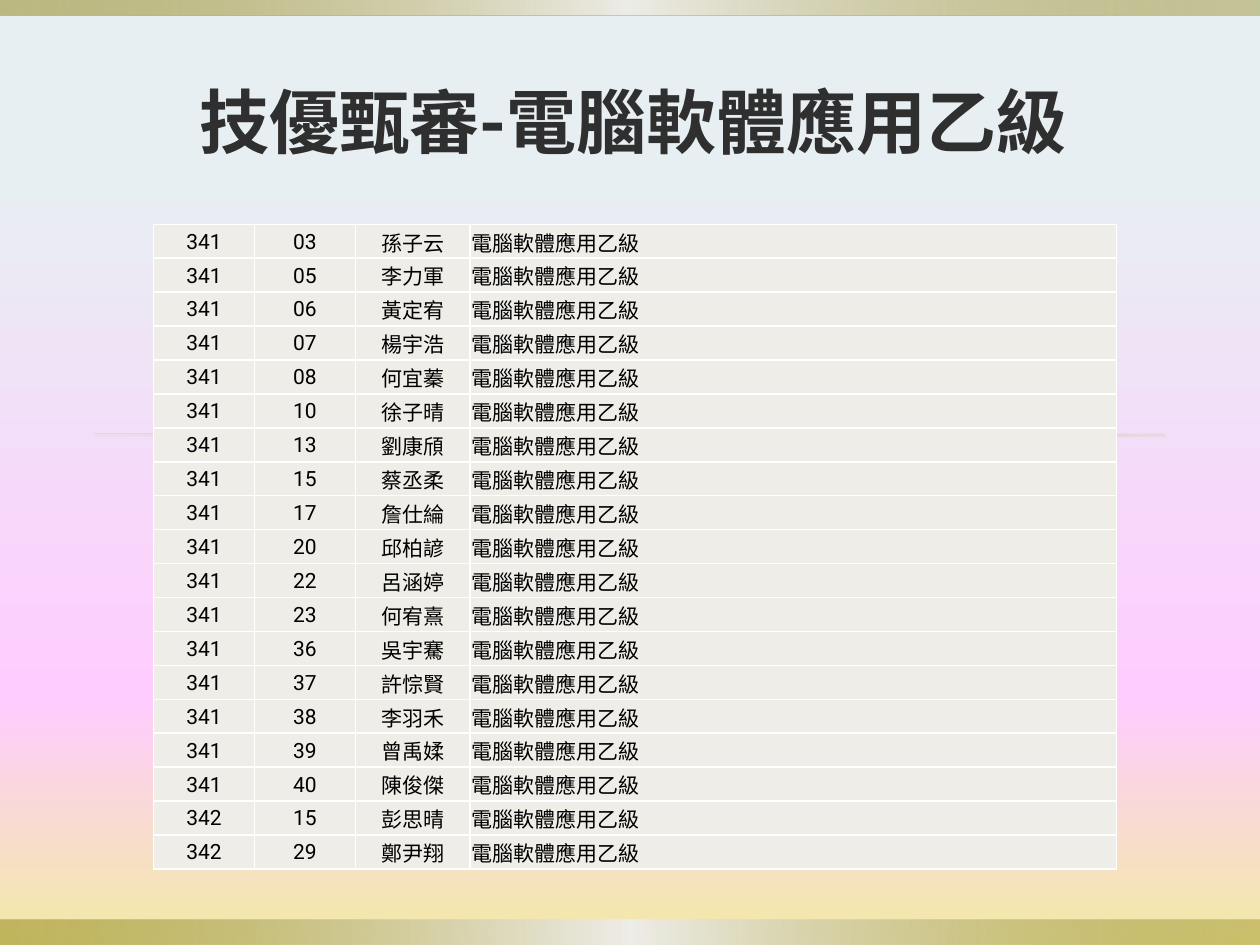
import pptx
import pptx.util
import pptx.dml.color
import pptx.enum.shapes
import pptx.enum.text
import pptx.oxml
import pptx.oxml.ns

WIDE, HIGH = 10, 7.5
FONT = "Roboto"
HUES = {"ink": "2F2F2F", "black": "000000", "white": "FFFFFF", "cell": "EEEDE8",
        "gold": "918415", "sand": "DCD9CC", "sky": "E7EFF2", "pink": "FFCCFF",
        "cream": "F2EAA5"}
SKY = [(18, "sky", 100), (74, "pink", 100), (100, "cream", 100)]
BAND = [(0, "gold", 50), (50, "cell", 100), (100, "gold", 40)]
RULE = [(0, "sand", 20), (50, "gold", 40), (100, "sand", 50)]
COLS = [0.8, 0.8, 0.91, 5.13]
SKILL = "電腦軟體應用乙級"
TITLE = "技優甄審-" + SKILL
GROUPS = {
    "341": "03 孫子云 05 李力軍 06 黃定宥 07 楊宇浩 08 何宜蓁 10 徐子晴 13 劉康頎 "
           "15 蔡丞柔 17 詹仕綸 20 邱柏諺 22 呂涵婷 23 何宥熹 36 吳宇騫 37 許悰賢 "
           "38 李羽禾 39 曾禹媃 40 陳俊傑",
    "342": "15 彭思晴 29 鄭尹翔",
}


def color(name):
    """Return the named colour."""
    return pptx.dml.color.RGBColor.from_string(HUES[name])


def place(item, box):
    """Move and size an item to a box in inches."""
    item.left, item.top, item.width, item.height = map(pptx.util.Inches, box)


def write(frame, text, size=12, hue="black", bold=False, align="CENTER"):
    """Put formatted text into a text frame."""
    para = frame.paragraphs[0]
    para.alignment = getattr(pptx.enum.text.PP_ALIGN, align)
    run = para.add_run()
    run.text = text
    run.font.name, run.font.size, run.font.bold = FONT, pptx.util.Pt(size), bold
    run.font.color.rgb = color(hue)


def blend(fill, node, stops, angle=0):
    """Give a fill gradient stops of position, colour and opacity."""
    fill.gradient()
    fill.gradient_angle = angle
    chain = node.xpath(".//a:gradFill/a:gsLst")[0]
    for old in list(chain):
        chain.remove(old)
    for spot, hue, alpha in stops:
        chain.append(pptx.oxml.parse_xml(
            f'<a:gs {pptx.oxml.ns.nsdecls("a")} pos="{spot * 1000}">'
            f'<a:srgbClr val="{HUES[hue]}"><a:alpha val="{alpha * 1000}"/>'
            '</a:srgbClr></a:gs>'))


def strip(slide, box, stops):
    """Draw a gradient strip."""
    shape = slide.shapes.add_shape(
        pptx.enum.shapes.MSO_SHAPE.RECTANGLE, *map(pptx.util.Inches, box))
    shape.shadow.inherit = False
    shape.line.fill.background()
    blend(shape.fill, shape.element, stops)


def decor(slide, box):
    """Draw the backdrop with its bands and middle rule."""
    left, top, wide, high = box
    blend(slide.background.fill, slide.element, SKY, 270)
    strip(slide, (left, top + high - 0.2, wide, 0.2), BAND)
    strip(slide, (left, top, wide, 0.12), BAND)
    strip(slide, (left + wide * 0.075, top + 3.44, wide * 0.85, 0.02), RULE)


def head(slide, box):
    """Fill the title and bring it above the backdrop."""
    title = slide.shapes.title
    place(title, box)
    frame = title.text_frame
    frame.word_wrap = True
    frame.auto_size = pptx.enum.text.MSO_AUTO_SIZE.NONE
    frame.vertical_anchor = pptx.enum.text.MSO_ANCHOR.MIDDLE
    write(frame, TITLE, size=40, hue="ink", bold=True)
    slide.shapes.element.append(title.element)


def edge(cell):
    """Line all four sides of a cell."""
    props = cell._tc.get_or_add_tcPr()
    for spot, side in enumerate("LRTB"):
        props.insert(spot, pptx.oxml.parse_xml(
            f'<a:ln{side} {pptx.oxml.ns.nsdecls("a")} w="12700"><a:solidFill>'
            f'<a:srgbClr val="{HUES["white"]}"/></a:solidFill></a:ln{side}>'))


def roster(slide, box):
    """Build the table of pupils with equal rows."""
    rows = []
    for room, text in GROUPS.items():
        words = text.split()
        rows += [(room, seat, name, SKILL) for seat, name in zip(words[::2], words[1::2])]
    table = slide.shapes.add_table(
        len(rows), len(COLS), *map(pptx.util.Inches, box)).table
    table.first_row = table.horz_banding = False
    for col, share in zip(table.columns, COLS):
        col.width = pptx.util.Inches(box[2] * share / sum(COLS))
    for line, row in zip(table.rows, rows):
        line.height = pptx.util.Inches(box[3] / len(rows))
        for cell, text in zip(line.cells, row):
            cell.margin_left = cell.margin_right = cell.margin_top = pptx.util.Inches(0.01)
            cell.margin_bottom = 0
            cell.vertical_anchor = pptx.enum.text.MSO_ANCHOR.MIDDLE
            cell.fill.solid()
            cell.fill.fore_color.rgb = color("cell")
            edge(cell)
            write(cell.text_frame, text, align="LEFT" if text == SKILL else "CENTER")


def main():
    """Build and save the slide."""
    deck = pptx.Presentation()
    deck.slide_width, deck.slide_height = map(pptx.util.Inches, (WIDE, HIGH))
    slide = deck.slides.add_slide(deck.slide_layouts.get_by_name("Title Only"))
    decor(slide, (0, 0, WIDE, HIGH))
    head(slide, (0.2, 0.52, 9.65, 0.87))
    roster(slide, (1.22, 1.78, sum(COLS), 5.12))
    deck.save("out.pptx")


if __name__ == "__main__":
    main()
